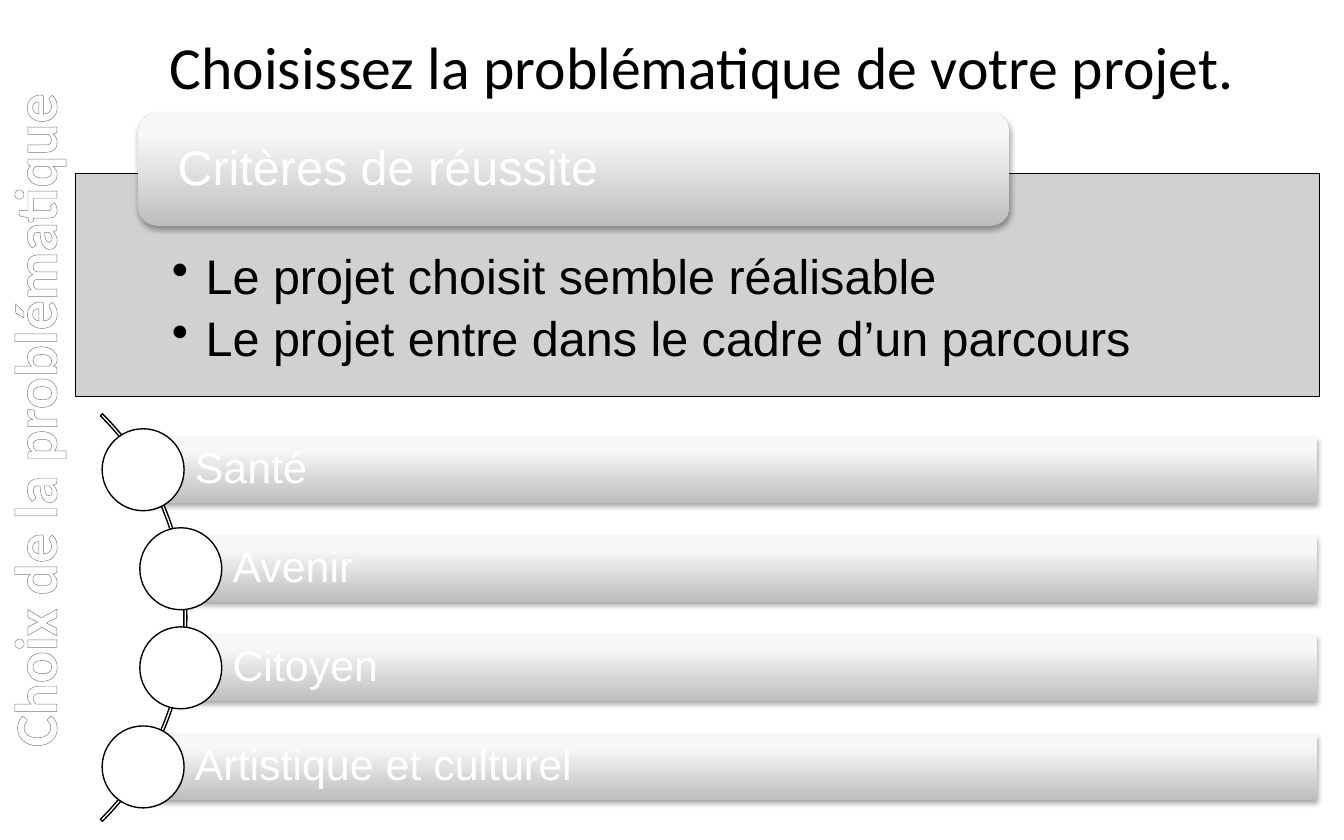
from lxml import etree
from pptx import Presentation
from pptx.dml.color import RGBColor
from pptx.enum.shapes import MSO_SHAPE as Preset
from pptx.enum.text import MSO_ANCHOR as Anchor, MSO_AUTO_SIZE as AutoSize, PP_ALIGN as Align
from pptx.oxml import parse_xml
from pptx.oxml.ns import nsdecls, qn
from pptx.util import Inches, Pt

BLACK, WHITE = "000000", "FFFFFF"
GRADIENT = [(0, "BEBEBE"), (80, "F7F7F7"), (100, "F8F8F8")]
THEMES = ["Santé", "Avenir", "Citoyen", "Artistique et culturel"]
CRITERIA = ["Le projet choisit semble réalisable",
            "Le projet entre dans le cadre d’un parcours"]


def color(hex_text):
    """Turn a hex string into a colour."""
    return RGBColor.from_string(hex_text)


def place(shape, box):
    """Move and size a shape by left, top, width and height in inches."""
    shape.left, shape.top, shape.width, shape.height = map(Inches, box)


def write(shape, lines, size, ink, font="Arial", insets=(0.1, 0.05, 0.1, 0.05),
          anchor=Anchor.MIDDLE, align=Align.LEFT, spacing=0.9, wrap=True):
    """Fill a shape with evenly formatted paragraphs and return them."""
    frame = shape.text_frame
    frame.text = "\n".join(lines)
    frame.word_wrap = wrap
    frame.auto_size = AutoSize.NONE
    frame.vertical_anchor = anchor
    (frame.margin_left, frame.margin_top,
     frame.margin_right, frame.margin_bottom) = map(Inches, insets)
    for para in frame.paragraphs:
        para.alignment = align
        para.line_spacing = spacing
        para.font.name = font
        para.font.size = Pt(size)
        para.font.color.rgb = color(ink)
    return frame.paragraphs


def add_outlined(page, preset, box, fill=None):
    """Add a shape with a thin black line and an optional plain fill."""
    shape = page.shapes.add_shape(preset, *map(Inches, box))
    shape.shadow.inherit = False
    shape.line.color.rgb = color(BLACK)
    shape.line.width = Pt(0.75)
    if fill:
        shape.fill.solid()
        shape.fill.fore_color.rgb = color(fill)
    else:
        shape.fill.background()
    return shape


def add_glossy(page, preset, box):
    """Add a borderless shape with a vertical gradient and a soft shadow."""
    shape = page.shapes.add_shape(preset, *map(Inches, box))
    shape.shadow.inherit = False
    shape.line.fill.background()
    properties = shape._element.spPr
    stops = "".join(f'<a:gs pos="{pos * 1000}"><a:srgbClr val="{tone}"/></a:gs>'
                    for pos, tone in GRADIENT)
    properties.find(qn("a:ln")).addprevious(parse_xml(
        f'<a:gradFill {nsdecls("a")} rotWithShape="1"><a:gsLst>{stops}</a:gsLst>'
        '<a:lin ang="16200000" scaled="0"/></a:gradFill>'))
    properties.find(qn("a:effectLst")).append(parse_xml(
        f'<a:outerShdw {nsdecls("a")} blurRad="40000" dist="23000" dir="5400000" '
        f'rotWithShape="0"><a:srgbClr val="{BLACK}"><a:alpha val="35000"/></a:srgbClr>'
        '</a:outerShdw>'))
    return shape


def add_title(page):
    """Format the title placeholder."""
    title = page.shapes.title
    place(title, (1.16, 0.17, 8.21, 0.63))
    write(title, ["Choisissez la problématique de votre projet."], 32, BLACK,
          "Calibri", anchor=Anchor.TOP, spacing=1.0, wrap=False)


def add_side_label(page):
    """Add the outlined label that runs up the left edge."""
    label = page.shapes.add_textbox(*map(Inches, (-2.88, 2.81, 6.25, 0.63)))
    label.rotation = 270
    para = write(label, ["Choix de la problématique"], 32, WHITE, "Calibri",
                 align=Align.CENTER, spacing=1.0)[0]
    para.font.bold = True
    para.runs[0].font._element.insert(0, parse_xml(
        f'<a:ln {nsdecls("a")} w="9525"><a:solidFill><a:srgbClr val="7C7C7C"/>'
        '</a:solidFill></a:ln>'))


def add_criteria(page):
    """Add the grey panel of bulleted criteria with its heading."""
    panel = add_outlined(page, Preset.RECTANGLE, (0.56, 1.29, 9.26, 1.66), "CCCCCC")
    tone = panel._element.spPr.find(qn("a:solidFill"))[0]
    etree.SubElement(tone, qn("a:alpha"), val="90000")
    for para in write(panel, CRITERIA, 26, BLACK, insets=(0.72, 0.59, 0.72, 0.2),
                      anchor=Anchor.TOP):
        para.space_after = Pt(5)
        layout = para._p.get_or_add_pPr()
        layout.set("marL", str(Inches(0.25)))
        layout.set("indent", str(-Inches(0.25)))
        layout.find(qn("a:defRPr")).addprevious(
            parse_xml(f'<a:buChar {nsdecls("a")} char="•"/>'))
    heading = add_glossy(page, Preset.ROUNDED_RECTANGLE, (1.03, 0.84, 6.48, 0.84))
    write(heading, ["Critères de réussite"], 26, WHITE, insets=(0.25, 0, 0.25, 0))


def add_themes(page):
    """Add the arc with one bar and one circle per theme."""
    arc = add_outlined(page, Preset.BLOCK_ARC, (-2.9, 2.45, 4.29, 4.29))
    for index, value in enumerate((189, 27, 0.005)):
        arc.adjustments[index] = value
    right, pitch, diameter = 9.8, 0.737, 0.61
    for index, theme in enumerate(THEMES):
        left = 1.06 if index in (0, len(THEMES) - 1) else 1.34
        top = 3.25 + index * pitch
        bar = add_glossy(page, Preset.RECTANGLE, (left, top, right - left, 0.49))
        write(bar, [theme], 23, WHITE, insets=(0.39, 0.06, 0.06, 0.06))
        add_outlined(page, Preset.OVAL,
                     (left - 0.3, top - 0.06, diameter, diameter), WHITE)


def main():
    """Build the slide and save the deck."""
    deck = Presentation()
    deck.slide_width, deck.slide_height = Inches(10), Inches(6.25)
    page = deck.slides.add_slide(deck.slide_layouts[5])
    add_side_label(page)
    add_criteria(page)
    add_title(page)
    add_themes(page)
    deck.save("out.pptx")


if __name__ == "__main__":
    main()
